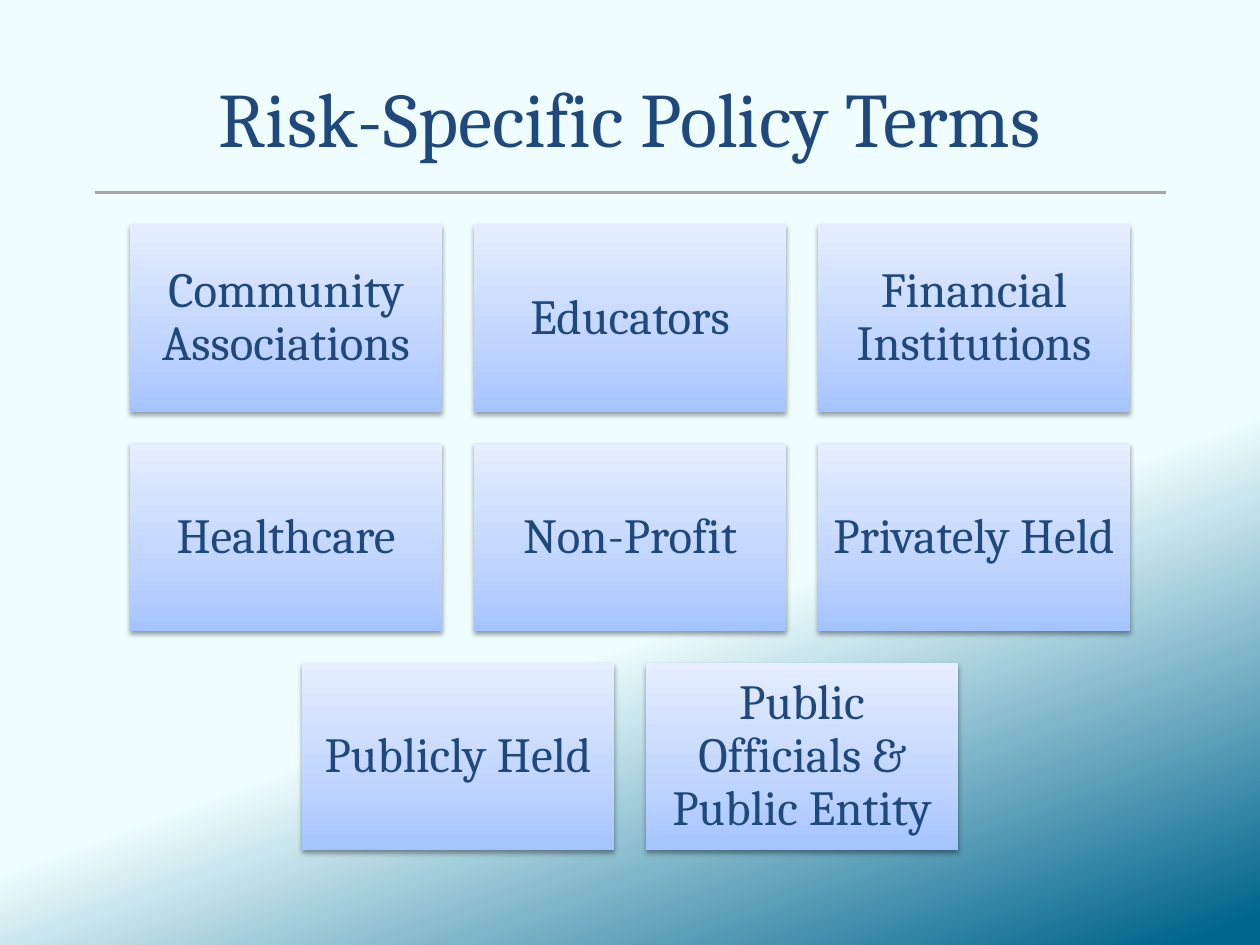
from dataclasses import dataclass

from lxml import etree
from pptx import Presentation
from pptx.dml.color import RGBColor
from pptx.enum.shapes import MSO_CONNECTOR, MSO_SHAPE
from pptx.enum.text import MSO_ANCHOR, PP_ALIGN
from pptx.oxml.ns import qn
from pptx.util import Inches, Pt

STRAIGHT = MSO_CONNECTOR.STRAIGHT
RECTANGLE = MSO_SHAPE.RECTANGLE
MIDDLE = MSO_ANCHOR.MIDDLE
CENTER = PP_ALIGN.CENTER


@dataclass(frozen=True)
class Theme:
    font: str = "Cambria"
    ink: str = "1F497D"
    rule: str = "A6A6A6"
    shadow: str = "000000"
    backdrop: tuple = ((2, "01658D"), (38, "EFFDFF"))
    card: tuple = ((0, "A4C4FF"), (35, "BFD4FF"), (100, "E6EEFF"))
    title_size: int = 44
    card_size: int = 28


THEME = Theme()
SLIDE_WIDTH, SLIDE_HEIGHT = 10, 7.5
CARD_WIDTH, CARD_HEIGHT, GAP = 2.48, 1.49, 0.25
CARDS_TOP = 1.78
POLICY_ROWS = (
    ("Community Associations", "Educators", "Financial Institutions"),
    ("Healthcare", "Non-Profit", "Privately Held"),
    ("Publicly Held", "Public Officials & Public Entity"),
)


def add_color(parent, color):
    return etree.SubElement(parent, qn("a:srgbClr"), val=color)


def paint_gradient(fill, owner, stops, clockwise_angle):
    fill.gradient()
    fill.gradient_angle = 360 - clockwise_angle
    stop_list = owner.find(".//" + qn("a:gsLst"))
    for default_stop in list(stop_list):
        stop_list.remove(default_stop)
    for percent, color in stops:
        stop = etree.SubElement(stop_list, qn("a:gs"), pos=str(percent * 1000))
        add_color(stop, color)


def add_soft_shadow(shape):
    shape.shadow.inherit = False
    effects = shape.element.spPr.find(qn("a:effectLst"))
    shadow = etree.SubElement(
        effects, qn("a:outerShdw"), blurRad=str(Pt(3.1)), dist=str(Pt(1.6)),
        dir="5400000", rotWithShape="0")
    etree.SubElement(add_color(shadow, THEME.shadow), qn("a:alpha"), val="38000")


def write_text(frame, text, *, size, inset=None, line_spacing=None):
    frame.word_wrap = True
    frame.vertical_anchor = MIDDLE
    if inset is not None:
        frame.margin_left = frame.margin_right = Inches(inset)
        frame.margin_top = frame.margin_bottom = Inches(inset)
    paragraph = frame.paragraphs[0]
    paragraph.alignment = CENTER
    paragraph.line_spacing = line_spacing
    run = paragraph.add_run()
    run.text = text
    run.font.name = THEME.font
    run.font.size = Pt(size)
    run.font.color.rgb = RGBColor.from_string(THEME.ink)


def place_title(slide, text):
    title = slide.shapes.title
    title.left, title.top = Inches(0.5), Inches(0.3)
    title.width, title.height = Inches(9), Inches(1.25)
    write_text(title.text_frame, text, size=THEME.title_size)


def add_rule(slide, left, right, top):
    rule = slide.shapes.add_connector(
        STRAIGHT, Inches(left), Inches(top), Inches(right), Inches(top))
    rule.line.color.rgb = RGBColor.from_string(THEME.rule)
    rule.line.width = Pt(1.5)
    etree.SubElement(rule.element.spPr, qn("a:effectLst"))


def add_card(slide, label, left, top):
    card = slide.shapes.add_shape(
        RECTANGLE, Inches(left), Inches(top), Inches(CARD_WIDTH), Inches(CARD_HEIGHT))
    paint_gradient(card.fill, card.element, THEME.card, 270)
    card.line.fill.background()
    add_soft_shadow(card)
    write_text(card.text_frame, label, size=THEME.card_size, inset=0.12,
               line_spacing=0.9)


def add_card_rows(slide, rows):
    for row, labels in enumerate(rows):
        row_width = len(labels) * (CARD_WIDTH + GAP) - GAP
        row_left = (SLIDE_WIDTH - row_width) / 2
        top = CARDS_TOP + row * (CARD_HEIGHT + GAP)
        for column, label in enumerate(labels):
            add_card(slide, label, row_left + column * (CARD_WIDTH + GAP), top)


def main():
    deck = Presentation()
    deck.slide_width, deck.slide_height = Inches(SLIDE_WIDTH), Inches(SLIDE_HEIGHT)
    slide = deck.slides.add_slide(deck.slide_layouts[5])
    paint_gradient(slide.background.fill, slide.element, THEME.backdrop, 250)
    place_title(slide, "Risk-Specific Policy Terms")
    add_rule(slide, left=0.75, right=9.25, top=1.53)
    add_card_rows(slide, POLICY_ROWS)
    deck.save("out.pptx")


if __name__ == "__main__":
    main()
